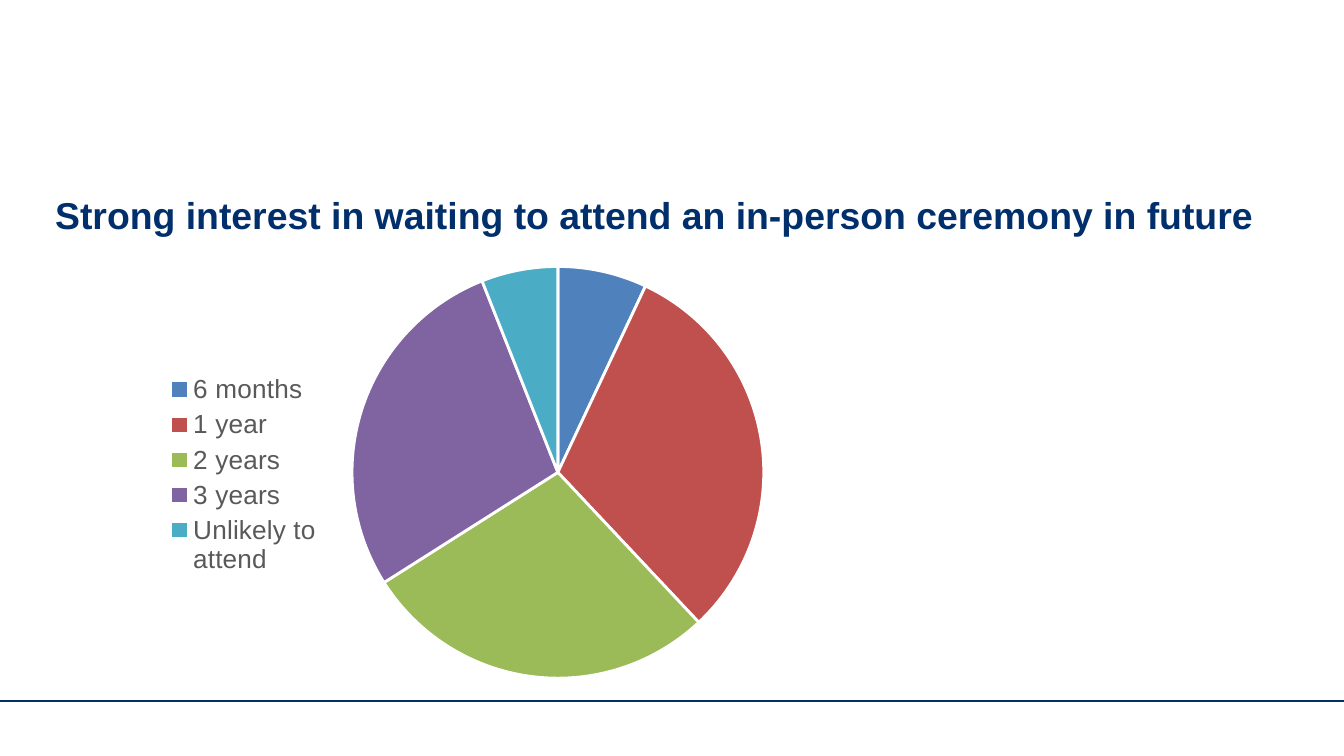
from lxml import etree
from pptx import Presentation
from pptx.chart.data import CategoryChartData
from pptx.dml.color import RGBColor
from pptx.enum import chart as ch, shapes, text
from pptx.oxml import ns
from pptx.util import Pt

NAVY = "002F6C"
SLICES = [
    ("6 months", 7, "4F81BD"),
    ("1 year", 31, "C0504D"),
    ("2 years", 28, "9BBB59"),
    ("3 years", 28, "8064A2"),
    ("Unlikely to attend", 6, "4BACC6"),
]


def rgb(value):
    return RGBColor.from_string(value)


def place(parent, before, inner=False, **fractions):
    """Fix a chart part's position, as fractions of the chart area."""
    for old in parent.findall(ns.qn("c:layout")):
        parent.remove(old)
    layout = etree.Element(ns.qn("c:layout"))
    manual = etree.SubElement(layout, ns.qn("c:manualLayout"))
    if inner:
        etree.SubElement(manual, ns.qn("c:layoutTarget")).set("val", "inner")
    for mode in ("xMode", "yMode"):
        etree.SubElement(manual, ns.qn("c:" + mode)).set("val", "edge")
    for name, value in fractions.items():
        etree.SubElement(manual, ns.qn("c:" + name)).set("val", str(value))
    parent.find(ns.qn(before)).addprevious(layout)


prs = Presentation()
prs.slide_width, prs.slide_height = Pt(720), Pt(405)
s = prs.slides.add_slide(prs.slide_layouts[5])

# Footer rule
rule = s.shapes.add_connector(shapes.MSO_CONNECTOR.STRAIGHT, Pt(0), Pt(375.4), Pt(720), Pt(375.4))
rule.line.color.rgb = rgb(NAVY)
rule.line.width = Pt(1)
etree.SubElement(rule._element.spPr, ns.qn("a:effectLst"))

# Heading
title = s.shapes.title
title.left, title.top, title.width, title.height = Pt(22.3), Pt(99.4), Pt(661.7), Pt(45.4)
tf = title.text_frame
tf.text = "Strong interest in waiting to attend an in-person ceremony in future"
tf.word_wrap = True
tf.auto_size = text.MSO_AUTO_SIZE.NONE
tf.vertical_anchor = text.MSO_ANCHOR.TOP
p = tf.paragraphs[0]
p.alignment = text.PP_ALIGN.LEFT
p.font.name, p.font.size, p.font.bold = "Arial", Pt(20), True
p.font.color.rgb = rgb(NAVY)

# Pie chart
data = CategoryChartData()
data.categories = [name for name, _, _ in SLICES]
data.add_series("Series 1", [value for _, value, _ in SLICES])
chart = s.shapes.add_chart(
    ch.XL_CHART_TYPE.PIE, Pt(76.3), Pt(133.2), Pt(350.6), Pt(239.8), data
).chart
chart.has_title = False
chart.font.name, chart.font.size = "Calibri", Pt(10)
chart.font.color.rgb = rgb("000000")

plot = chart.plots[0]
plot.vary_by_categories = True
for i, (_, _, color) in enumerate(SLICES):
    fmt = plot.series[0].points[i].format
    fmt.fill.solid()
    fmt.fill.fore_color.rgb = rgb(color)
    fmt.line.color.rgb = rgb("FFFFFF")
    fmt.line.width = Pt(1.5)

chart.has_legend = True
legend = chart.legend
legend.position = ch.XL_LEGEND_POSITION.LEFT
legend.include_in_layout = False
legend.font.name, legend.font.size = "Arial", Pt(14)
legend.font.color.rgb = rgb("595959")

place(plot._element.getparent(), "c:pieChart", inner=True, x=0.32, y=0.04, w=0.63, h=0.92)
place(legend._element, "c:overlay", x=0.02, y=0.27, w=0.27, h=0.47)

prs.save("out.pptx")
